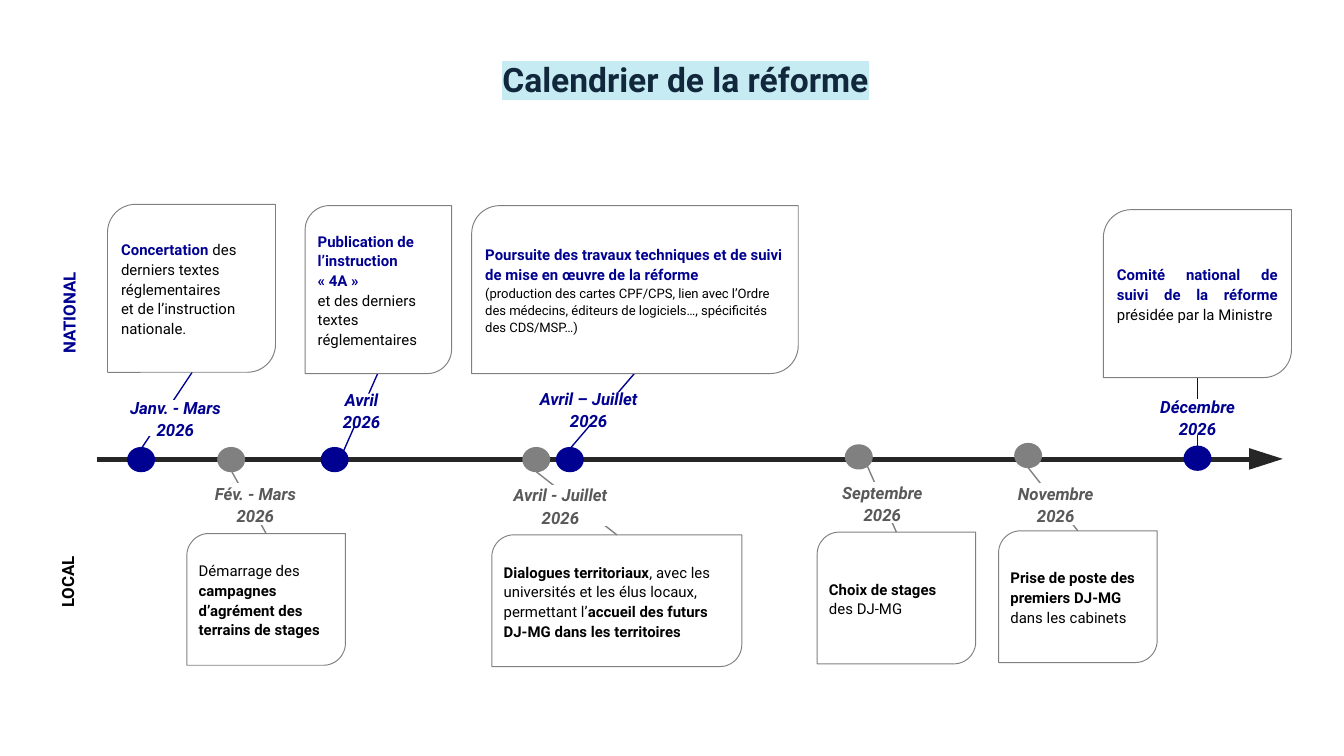
import copy
from dataclasses import dataclass
from typing import NamedTuple

import pptx
import pptx.dml.color
import pptx.enum.shapes
import pptx.enum.text
import pptx.oxml
import pptx.oxml.ns
import pptx.util

Inches = pptx.util.Inches
Pt = pptx.util.Pt
RGBColor = pptx.dml.color.RGBColor
Kind = pptx.enum.shapes.MSO_SHAPE
Align = pptx.enum.text.PP_ALIGN
Anchor = pptx.enum.text.MSO_ANCHOR

NAVY = RGBColor(0x00, 0x00, 0x91)
BLACK = RGBColor(0x00, 0x00, 0x00)
WHITE = RGBColor(0xFF, 0xFF, 0xFF)
GREY = RGBColor(0x80, 0x80, 0x80)
SLATE = RGBColor(0x59, 0x59, 0x59)
DARK = RGBColor(0x26, 0x26, 0x26)
TITLE = RGBColor(0x11, 0x27, 0x3B)
PALE = "C7EBF2"

WIDTH = 10
HEIGHT = WIDTH * 9 / 16
AXIS = 3.42
DOT = (0.18, 0.16)
HARD = chr(160)  # no-break space inside French quotes


class Box(NamedTuple):
    left: float
    top: float
    width: float
    height: float


class Piece(NamedTuple):
    text: str
    bold: bool = False
    color: RGBColor = BLACK
    size: float = 8
    italic: bool = False


@dataclass
class Event:
    """A dated step: card, link, date label and dot on the axis."""
    date: str
    card: Box
    label: Box
    dot: tuple[float, float]
    start: tuple[float, float]
    pieces: list[Piece]
    local: bool = False
    edge: bool = True
    right: float = 0.04
    after: float = 0
    align: Align = Align.LEFT


EVENTS = [
    # National steps
    Event("Janv. - Mars 2026", Box(0.8, 1.52, 1.25, 1.25), Box(0.75, 2.99, 1.11, 0.24),
          (0.96, 3.34), (1.05, 3.34),
          [Piece("Concertation ", True, NAVY),
           Piece("des derniers textes réglementaires \net de l’instruction nationale.")]),
    Event("Avril 2026", Box(2.27, 1.53, 1.09, 1.25), Box(2.4, 2.93, 0.58, 0.24),
          (2.4, 3.34), (2.55, 3.37),
          [Piece(f"Publication de l’instruction «{HARD}4A{HARD}» \n", True, NAVY),
           Piece("et des derniers textes réglementaires")], edge=False),
    Event("Avril – Juillet 2026", Box(3.51, 1.53, 2.43, 1.25), Box(3.88, 2.92, 1, 0.24),
          (4.15, 3.34), (4.24, 3.34),
          [Piece("Poursuite des travaux techniques et de suivi de mise en œuvre"
                 " de la réforme \n", True, NAVY),
           Piece("(production des cartes CPF/CPS, lien avec l’Ordre des médecins, éditeurs"
                 " de logiciels…, spécificités des CDS/MSP…)", size=7)], edge=False),
    Event("Décembre 2026", Box(8.21, 1.56, 1.4, 1.25), Box(8.5, 2.98, 0.82, 0.24),
          (8.82, 3.33), (8.91, 3.33),
          [Piece("Comité national de suivi de la réforme ", True, NAVY),
           Piece("présidée par la Ministre")], after=6, align=Align.JUSTIFY),
    # Local steps
    Event("Fév. - Mars 2026", Box(1.39, 3.97, 1.18, 0.98), Box(1.41, 3.61, 0.98, 0.28),
          (1.63, 3.34), (1.72, 3.5),
          [Piece("Démarrage des "),
           Piece("campagnes d’agrément des terrains de stages", True)],
          local=True, right=0, after=6),
    Event("Avril - Juillet 2026", Box(3.66, 3.98, 1.86, 0.98), Box(3.68, 3.62, 0.98, 0.28),
          (3.9, 3.34), (3.99, 3.51),
          [Piece("Dialogues territoriaux", True),
           Piece(", avec les universités et les élus locaux, permettant l’"),
           Piece("accueil des futurs DJ-MG dans les territoires", True)],
          local=True, right=0, after=6),
    Event("Septembre 2026", Box(6.08, 3.96, 1.18, 0.98), Box(6.13, 3.6, 0.87, 0.28),
          (6.3, 3.32), (6.45, 3.46),
          [Piece("Choix de stages ", True), Piece("des DJ-MG")], local=True, after=6),
    Event("Novembre 2026", Box(7.43, 3.95, 1.18, 0.98), Box(7.42, 3.61, 0.87, 0.28),
          (7.56, 3.31), (7.65, 3.48),
          [Piece("Prise de poste des premiers DJ-MG ", True), Piece("dans les cabinets")],
          local=True, after=6),
]


def write(frame, pieces: list[Piece], align: Align = Align.CENTER, after: float = 0,
          **extra) -> None:
    """Fill a text frame with one paragraph of styled pieces."""
    look = {"word_wrap": True, "vertical_anchor": Anchor.MIDDLE} | extra
    for name, value in look.items():
        setattr(frame, name, value)
    para = frame.paragraphs[0]
    for name, value in {"alignment": align, "line_spacing": 1.1,
                        "space_after": Pt(after)}.items():
        setattr(para, name, value)
    for piece in pieces:
        for num, part in enumerate(piece.text.split("\n")):
            if num:
                para.add_line_break()
                para._p[-1].append(copy.deepcopy(run._r.rPr))
            if not part:
                continue
            run = para.add_run()
            run.text = part
            font = {"name": "Roboto", "size": Pt(piece.size),
                    "bold": piece.bold, "italic": piece.italic}
            for name, value in font.items():
                setattr(run.font, name, value)
            run.font.color.rgb = piece.color


def draw(shapes, kind: Kind, box: Box, fill: RGBColor | None = None,
         line: RGBColor | None = None, width: float = 2):
    """Add a flat preset shape."""
    shape = shapes.add_shape(kind, *map(Inches, box))
    shape.shadow.inherit = False
    for part, color in ((shape.fill, fill), (shape.line.fill, line)):
        if color is None:
            part.background()
        else:
            part.solid()
            part.fore_color.rgb = color
    if line is not None:
        shape.line.width = Pt(width)
    return shape


def link(shapes, start: tuple[float, float], end: tuple[float, float],
         color: RGBColor, width: float) -> None:
    """Add a straight line without a shadow."""
    line = shapes.add_connector(pptx.enum.shapes.MSO_CONNECTOR.STRAIGHT,
                                *map(Inches, (*start, *end)))
    line.line.color.rgb = color
    line.line.width = Pt(width)
    line._element.spPr.append(pptx.oxml.parse_xml(
        f"<a:effectLst {pptx.oxml.ns.nsdecls('a')}/>"))


def head(shape) -> None:
    """Place the title and highlight its text."""
    names = ("left", "top", "width", "height")
    for name, value in zip(names, (1.75, 0.42, 6.7, 0.46)):
        setattr(shape, name, Inches(value))
    write(shape.text_frame, [Piece("Calendrier de la réforme", True, TITLE, 18)],
          vertical_anchor=Anchor.TOP, auto_size=pptx.enum.text.MSO_AUTO_SIZE.NONE)
    para = shape.text_frame.paragraphs[0]
    para.line_spacing = 0.9
    mark = pptx.oxml.parse_xml(f"<a:highlight {pptx.oxml.ns.nsdecls('a')}>"
                               f'<a:srgbClr val="{PALE}"/></a:highlight>')
    para.runs[0]._r.rPr.find(pptx.oxml.ns.qn("a:solidFill")).addnext(mark)


def main() -> None:
    deck = pptx.Presentation()
    deck.slide_width, deck.slide_height = Inches(WIDTH), Inches(HEIGHT)
    slide = deck.slides.add_slide(deck.slide_layouts[5])
    shapes = slide.shapes
    head(shapes.title)

    # Row names
    for text, left, top, color in (("NATIONAL", -0.06, 2.2, NAVY),
                                   ("LOCAL", -0.07, 4.2, BLACK)):
        name = shapes.add_textbox(*map(Inches, (left, top, 1.13, 0.26)))
        name.rotation = 270
        write(name.text_frame, [Piece(text, True, color, 9)])

    # Time axis
    tip = draw(shapes, Kind.ISOSCELES_TRIANGLE, Box(9.34, 3.29, 0.16, 0.25), DARK)
    tip.rotation = 90
    link(shapes, (0.72, AXIS), (9.4, AXIS), DARK, 2.25)

    # Steps
    for event in EVENTS:
        box = event.card
        color = GREY if event.local else NAVY
        mid = round(box.left + box.width / 2, 2)
        side = box.top if event.local else box.top + box.height
        link(shapes, event.start, (mid, side), color, 0.75)
        card = draw(shapes, Kind.ROUND_2_DIAG_RECTANGLE, box, line=GREY, width=0.5)
        write(card.text_frame, event.pieces, event.align, event.after,
              margin_left=Inches(0.04), margin_right=Inches(event.right))
        label = draw(shapes, Kind.RECTANGLE, event.label, WHITE,
                     WHITE if event.edge else None)
        ink = SLATE if event.local else NAVY
        write(label.text_frame, [Piece(event.date, True, ink, 9, True)])
        draw(shapes, Kind.OVAL, Box(*event.dot, *DOT), color, color)

    deck.save("out.pptx")


if __name__ == "__main__":
    main()
